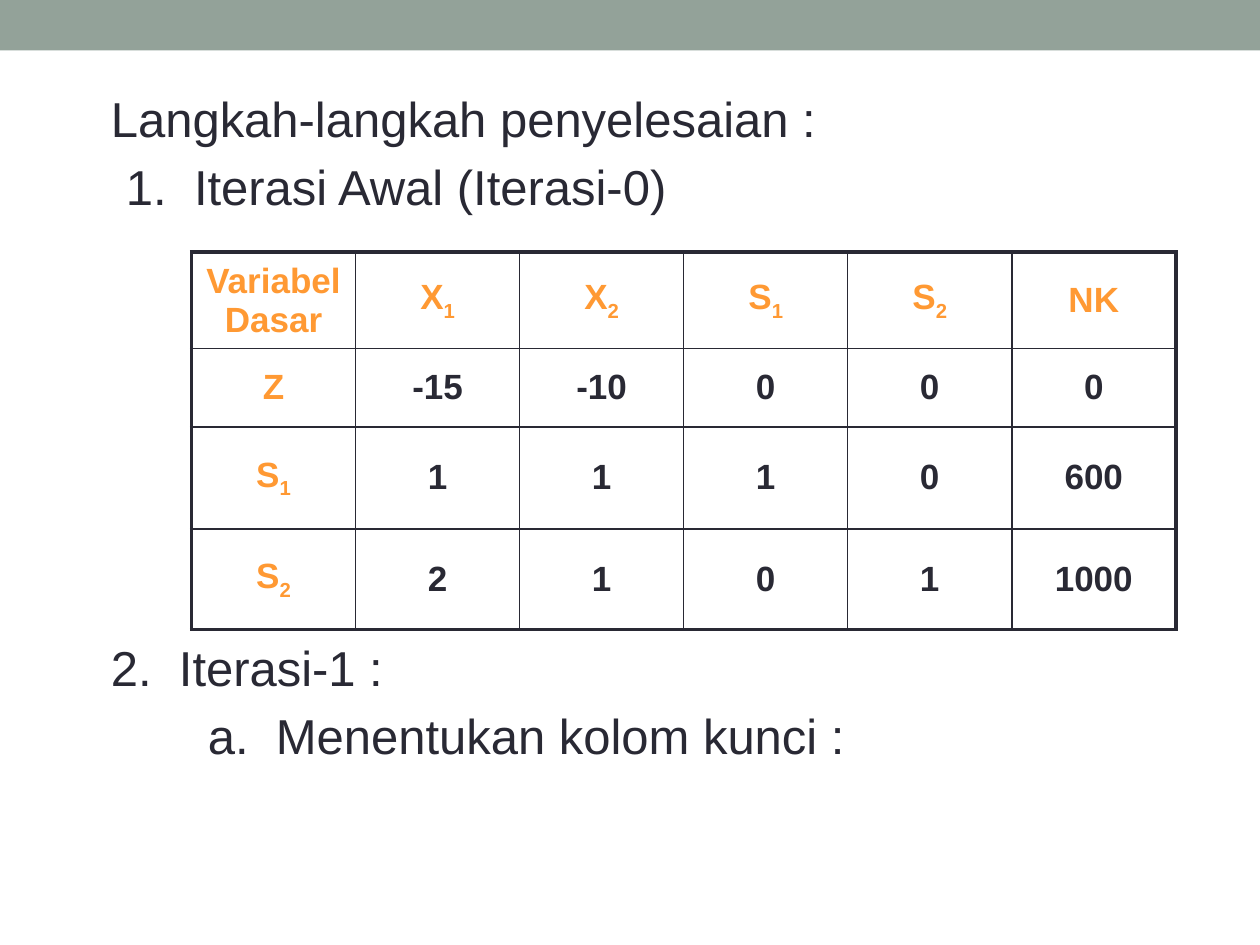
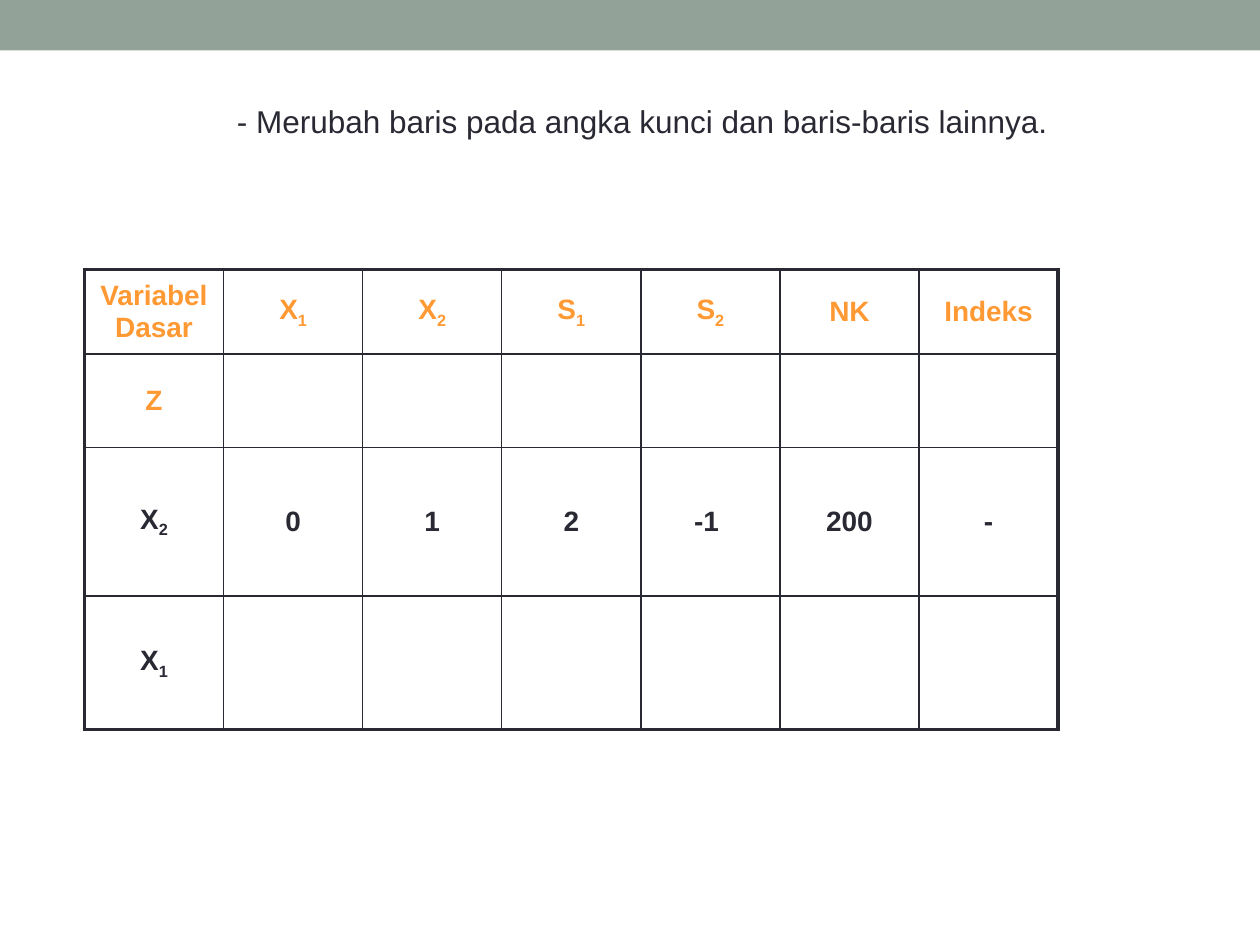
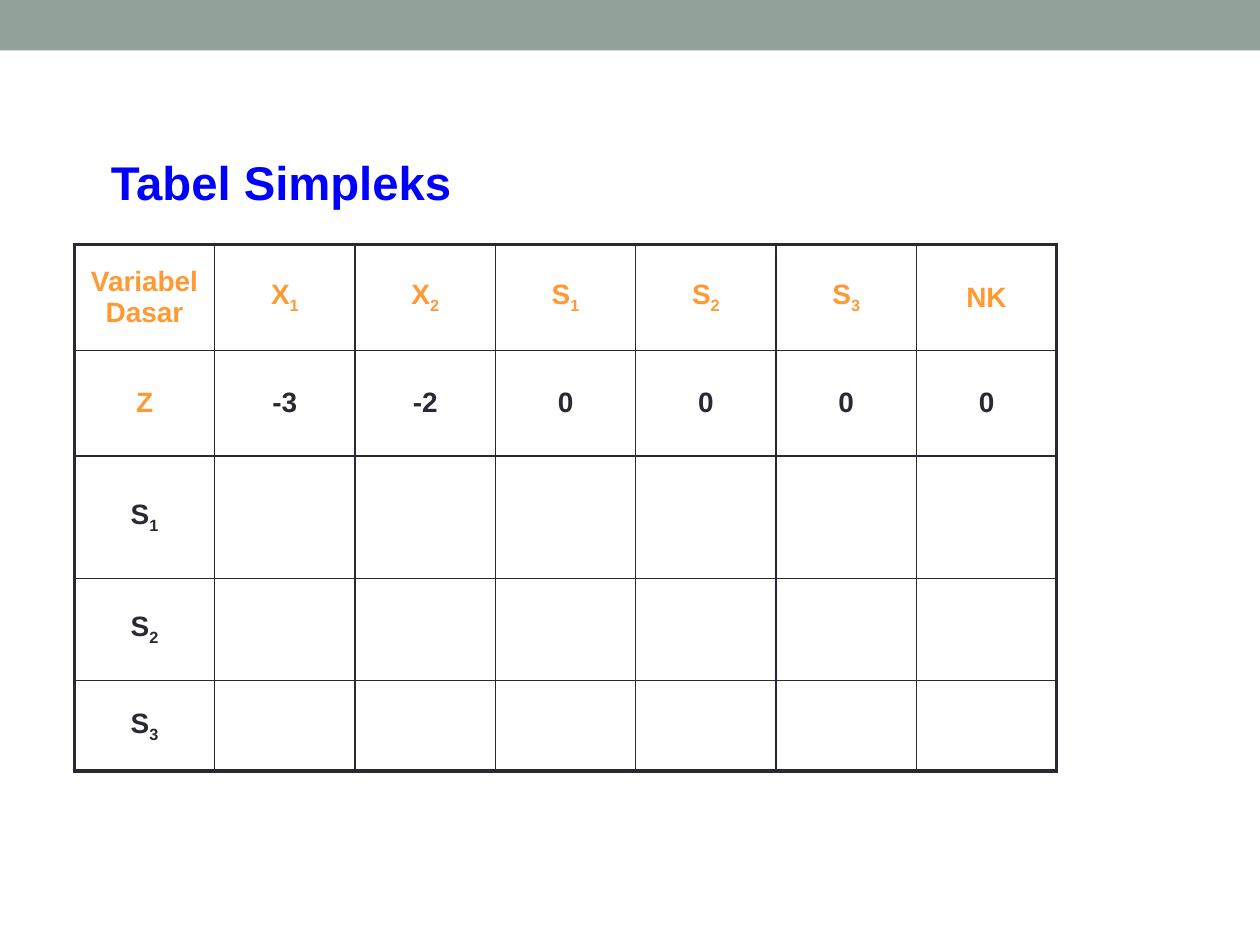
from lxml import etree
from pptx import Presentation
from pptx.dml.color import RGBColor
from pptx.enum.shapes import MSO_SHAPE
from pptx.enum.text import MSO_ANCHOR, PP_ALIGN
from pptx.oxml.ns import qn
from pptx.util import Inches, Pt

RECTANGLE = MSO_SHAPE.RECTANGLE
CENTER = PP_ALIGN.CENTER
MIDDLE = MSO_ANCHOR.MIDDLE

FONT = "Arial"
INK, ACCENT, BLUE, BAND = "292934", "FF9933", "0000FF", "93A299"

# The slide is a grid of square units, ten to the inch
COLUMNS, ROWS = 100, 75
BAND_ROWS = 4
TEXT_LEFT = 8.8
NUMBER_WIDTH = 5.4
THIN, THICK = 1, 2.25


def units(count):
    return Inches(count / 10)


def color(hex_code):
    return RGBColor.from_string(hex_code)


def style(para, size, hex_code=INK, bold=False):
    para.font.name = FONT
    para.font.size = Pt(size)
    para.font.bold = bold
    para.font.color.rgb = color(hex_code)


def add_page(deck):
    """Add a blank slide with the band along its top edge."""
    page = deck.slides.add_slide(deck.slide_layouts[6])
    band = page.shapes.add_shape(RECTANGLE, 0, 0, units(COLUMNS), units(BAND_ROWS))
    band.shadow.inherit = False
    band.fill.solid()
    band.fill.fore_color.rgb = color(BAND)
    band.line.fill.background()
    return page


def add_line(page, text, left, top, size=28, hex_code=INK, bold=False):
    """Add one line of text; a tab after its number makes a hanging indent."""
    box = page.shapes.add_textbox(units(left), units(top),
                                  units(95.6 - left), units(5.5))
    frame = box.text_frame
    frame.word_wrap = True
    frame.margin_left = frame.margin_right = 0
    para = frame.paragraphs[0]
    para.text = text
    if "\t" in text:
        props = para._p.get_or_add_pPr()
        props.set("marL", str(units(NUMBER_WIDTH)))
        props.set("indent", str(-units(NUMBER_WIDTH)))
    style(para, size, hex_code, bold)


def add_border(cell, side, width):
    edge = etree.SubElement(cell._tc.get_or_add_tcPr(), qn("a:ln" + side),
                            w=str(Pt(width)))
    fill = etree.SubElement(edge, qn("a:solidFill"))
    etree.SubElement(fill, qn("a:srgbClr"), val=INK)


def fill_cell(cell, label, size, hex_code):
    """Write a label; what follows an underscore is a subscript."""
    cell.vertical_anchor = MIDDLE
    para = cell.text_frame.paragraphs[0]
    para.alignment = CENTER
    style(para, size, hex_code, bold=True)
    base, _, index = label.partition("_")
    if base:
        para.add_run().text = base
    if index:
        span = para.add_run()
        span.text = index
        span._r.get_or_add_rPr().set("baseline", "-25000")


def add_simplex_table(page, left, top, column_width, heights, rows, size,
                      accent_rows=2):
    """Add a tableau with a thick frame; its first labels are in the accent."""
    row_count, column_count = len(rows), len(rows[0])
    table = page.shapes.add_table(
        row_count, column_count, units(left), units(top),
        units(column_width * column_count), units(sum(heights))).table
    table.first_row = table.horz_banding = False
    for column in table.columns:
        column.width = units(column_width)
    for r, (height, labels) in enumerate(zip(heights, rows)):
        table.rows[r].height = units(height)
        for c, label in enumerate(labels):
            cell = table.cell(r, c)
            is_accent = r == 0 or (c == 0 and r < accent_rows)
            fill_cell(cell, label, size, ACCENT if is_accent else INK)
            outer = {"L": c == 0, "R": c == column_count - 1,
                     "T": r == 0, "B": r == row_count - 1}
            for side, is_outer in outer.items():
                add_border(cell, side, THICK if is_outer else THIN)
            cell.fill.background()


def main():
    deck = Presentation()
    deck.slide_width, deck.slide_height = units(COLUMNS), units(ROWS)
    basis = ["Variabel Dasar", "X_1", "X_2", "S_1", "S_2"]
    blanks = [""] * 6

    # Initial iteration
    page = add_page(deck)
    add_line(page, "Langkah-langkah penyelesaian :", TEXT_LEFT, 6.5)
    add_line(page, "1.\tIterasi Awal (Iterasi-0)", 10, 11.9)
    add_simplex_table(page, 15.2, 20, 13.02, [6.3, 6.2, 8.1, 8], [
        basis + ["NK"],
        ["Z", "-15", "-10", "0", "0", "0"],
        ["S_1", "1", "1", "1", "0", "600"],
        ["S_2", "2", "1", "0", "1", "1000"],
    ], size=20, accent_rows=4)
    add_line(page, "2.\tIterasi-1 :", TEXT_LEFT, 50.1)
    add_line(page, "a.\tMenentukan kolom kunci :", 16.5, 55.5)

    # Changing the rows
    page = add_page(deck)
    add_line(page, "- Merubah baris pada angka kunci dan baris-baris lainnya.",
             18.8, 7.6, size=18)
    add_simplex_table(page, 6.7, 21.4, 11.04, [6.7, 7.4, 11.8, 10.6], [
        basis + ["NK", "Indeks"],
        ["Z"] + blanks,
        ["X_2", "0", "1", "2", "-1 ", "200", "-"],
        ["X_1"] + blanks,
    ], size=16)

    # Simplex table to complete
    page = add_page(deck)
    add_line(page, "Tabel Simpleks", TEXT_LEFT, 11.7, size=27,
             hex_code=BLUE, bold=True)
    add_simplex_table(page, 5.9, 19.4, 11.14, [8.4, 8.4, 9.7, 8.1, 7.2], [
        basis + ["S_3", "NK"],
        ["Z", "-3", "-2", "0", "0", "0", "0"],
        *([label] + blanks for label in ("S_1", "S_2", "S_3")),
    ], size=16)

    deck.save("out.pptx")


if __name__ == "__main__":
    main()
